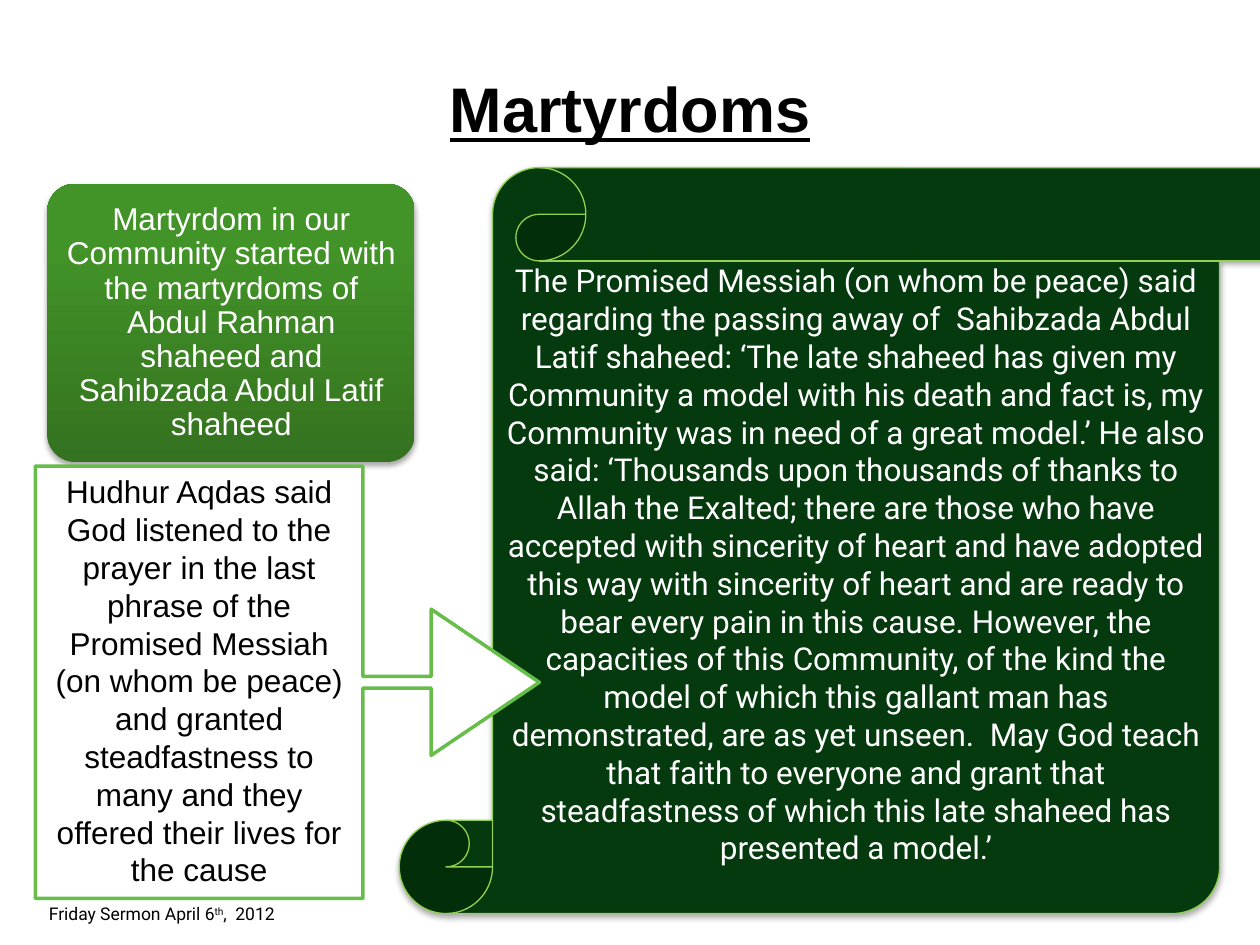
from copy import deepcopy
from lxml.etree import SubElement
from pptx import Presentation
from pptx.dml.color import RGBColor
from pptx.enum.shapes import MSO_SHAPE as Shape
from pptx.enum.text import MSO_ANCHOR as Anchor, MSO_AUTO_SIZE as AutoSize, PP_ALIGN as Align
from pptx.oxml.ns import qn
from pptx.util import Pt

BLACK = RGBColor(0x00, 0x00, 0x00)
WHITE = RGBColor(0xFF, 0xFF, 0xFF)
SCROLL_GREEN = RGBColor(0x04, 0x3A, 0x0D)
SCROLL_LINE = RGBColor(0x92, 0xD0, 0x50)
CALLOUT_LINE = RGBColor(0x66, 0xBD, 0x49)
CARD_STOPS = [
    (0, RGBColor(0x34, 0x72, 0x1F)),
    (0.8, RGBColor(0x43, 0x94, 0x28)),
    (1, RGBColor(0x42, 0x97, 0x26)),
]


def add_shadow(shape):
    shape.shadow.inherit = False
    effects = shape._element.spPr.find(qn("a:effectLst"))
    shadow = SubElement(effects, qn("a:outerShdw"), blurRad=str(Pt(3.1)),
                        dist=str(Pt(1.8)), dir="5400000", rotWithShape="0")
    color = SubElement(shadow, qn("a:srgbClr"), val="000000")
    SubElement(color, qn("a:alpha"), val="35000")


def write(shape, text, font_name, size, color, anchor, align=Align.CENTER):
    frame = shape.text_frame
    frame.word_wrap = True
    frame.vertical_anchor = anchor
    para = frame.paragraphs[0]
    para.alignment = align
    para.add_run().text = text
    para.font.name = font_name
    para.font.size = Pt(size)
    para.font.color.rgb = color
    return para


deck = Presentation()
deck.slide_width, deck.slide_height = Pt(720), Pt(540)
page = deck.slides.add_slide(deck.slide_layouts[5])
shapes = page.shapes

title = shapes.title
title.left, title.top, title.width, title.height = Pt(36), Pt(36), Pt(648), Pt(72)
para = write(title, "Martyrdoms", "Arial", 36, BLACK, Anchor.TOP)
para.font.bold = True
para.font.underline = True
frame = title.text_frame
frame.auto_size = AutoSize.NONE
frame.margin_left = frame.margin_right = frame.margin_bottom = 0
frame.margin_top = Pt(4)

group = shapes.add_group_shape()
card = group.shapes.add_shape(Shape.ROUNDED_RECTANGLE, Pt(27), Pt(105), Pt(210), Pt(159))
card.adjustments[0] = 0.1
card.line.fill.background()
card.fill.gradient()
card.fill.gradient_angle = 90
stop_list = card._element.spPr.find(qn("a:gradFill")).find(qn("a:gsLst"))
stop_list.append(deepcopy(stop_list[-1]))
for stop, (position, color) in zip(card.fill.gradient_stops, CARD_STOPS):
    stop.position = position
    stop.color.rgb = color
add_shadow(card)

label = group.shapes.add_textbox(Pt(31.7), Pt(109.5), Pt(201), Pt(150))
para = write(
    label,
    "Martyrdom in our Community started with the martyrdoms of Abdul Rahman "
    "shaheed and Sahibzada Abdul Latif shaheed",
    "Arial", 18, WHITE, Anchor.MIDDLE)
para.line_spacing = 0.9
frame = label.text_frame
frame.margin_left = frame.margin_right = frame.margin_top = frame.margin_bottom = Pt(5)

scroll = shapes.add_shape(Shape.VERTICAL_SCROLL, Pt(228.2), Pt(95.8), Pt(522), Pt(426.2))
scroll.fill.solid()
scroll.fill.fore_color.rgb = SCROLL_GREEN
scroll.line.color.rgb = SCROLL_LINE
scroll.line.width = Pt(0.75)
add_shadow(scroll)
write(
    scroll,
    "The Promised Messiah (on whom be peace) said regarding the passing away of  "
    "Sahibzada Abdul Latif shaheed: ‘The late shaheed has given my Community a model "
    "with his death and fact is, my Community was in need of a great model.’ He also "
    "said: ‘Thousands upon thousands of thanks to Allah the Exalted; there are those "
    "who have accepted with sincerity of heart and have adopted this way with "
    "sincerity of heart and are ready to bear every pain in this cause. However, the "
    "capacities of this Community, of the kind the model of which this gallant man has "
    "demonstrated, are as yet unseen.  May God teach that faith to everyone and grant "
    "that steadfastness of which this late shaheed has presented a model.’",
    "Roboto", 18, WHITE, Anchor.MIDDLE)

callout = shapes.add_shape(Shape.RIGHT_ARROW_CALLOUT, Pt(20.2), Pt(266.4), Pt(288), Pt(247))
for index, value in enumerate([0.027, 0.169, 0.25, 0.65]):
    callout.adjustments[index] = value
callout.fill.solid()
callout.fill.fore_color.rgb = WHITE
callout.line.color.rgb = CALLOUT_LINE
callout.line.width = Pt(2)
callout.shadow.inherit = False
write(
    callout,
    "Hudhur Aqdas said God listened to the prayer in the last phrase of the Promised "
    "Messiah (on whom be peace) and granted steadfastness to many and they offered "
    "their lives for the cause",
    "Arial", 18, BLACK, Anchor.TOP)

footer = shapes.add_textbox(Pt(20.9), Pt(512.6), Pt(216), Pt(19.4))
para = write(footer, "Friday Sermon April 6", "Roboto", 10, BLACK, Anchor.TOP, Align.LEFT)
ordinal = para.add_run()
ordinal.text = "th"
ordinal.font._element.set("baseline", "30000")
para.add_run().text = ",  2012"
footer.text_frame.word_wrap = False

deck.save("out.pptx")
